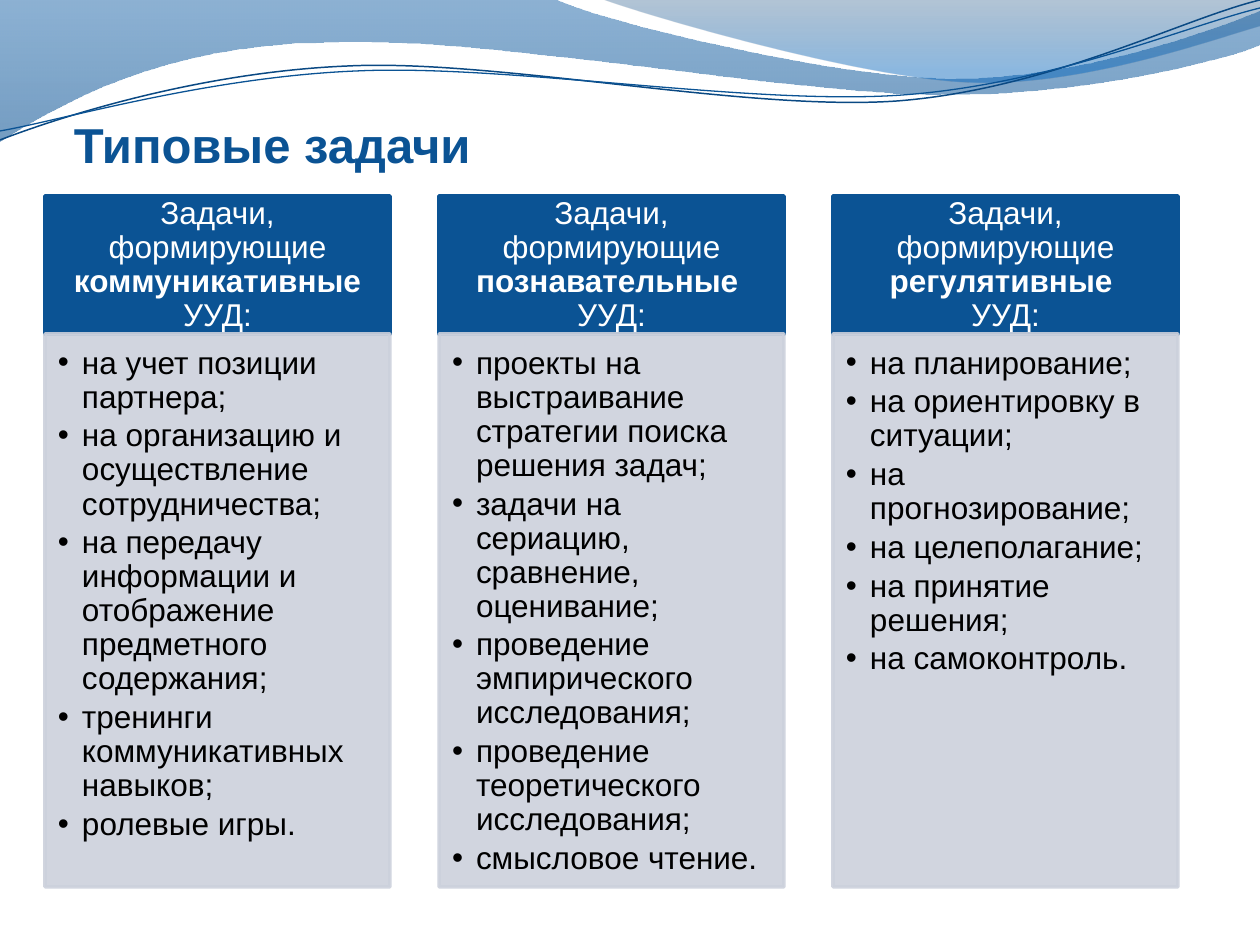
from dataclasses import dataclass

from lxml import etree
from pptx import Presentation
from pptx.dml.color import RGBColor
from pptx.enum.shapes import MSO_SHAPE
from pptx.enum.text import MSO_ANCHOR, PP_ALIGN
from pptx.oxml.ns import qn
from pptx.util import Pt

PX = 914400 // 126
RECT = MSO_SHAPE.RECTANGLE
TOP, MIDDLE, BOTTOM = MSO_ANCHOR.TOP, MSO_ANCHOR.MIDDLE, MSO_ANCHOR.BOTTOM
LEFT, CENTER = PP_ALIGN.LEFT, PP_ALIGN.CENTER


@dataclass(frozen=True)
class Theme:
    font: str = "Arial"
    title_size: int = 28
    text_size: int = 18
    blue: str = "0B5394"
    line_blue: str = "0A4983"
    panel: str = "CCD1DC"
    white: str = "FFFFFF"
    black: str = "000000"


THEME = Theme()

# Waves: start point, then segments of one point (line) or three (Bezier curve);
# gradient stops are position, colour, opacity in percent
WAVES = [
    ((0, 0),
     [[(556, 0)],
      [(600, 21), (837, 79), (955, 79)], [(1075, 79), (1207, 33), (1260, 11)],
      [(1260, 45)],
      [(1239, 55), (1096, 96), (940, 95)], [(784, 95), (481, 35), (324, 43)],
      [(163, 45), (58, 105), (0, 142)]],
     [(0, "00539E", 45), (1, "004C90", 55)]),
    ((604, 0),
     [[(641, 14), (859, 78), (969, 82)], [(1079, 87), (1211, 40), (1260, 26)],
      [(1260, 0)]],
     [(0, "003E76", 30), (0.8, "0063BC", 45)]),
]
WAVE_LINES = [
    ((0, 140),
     [[(60, 117), (199, 72), (349, 66)], [(498, 59), (747, 112), (898, 101)],
      [(1050, 89), (1182, 19), (1260, 0)]],
     THEME.line_blue, 0.85),
    ((0, 131),
     [[(59, 121), (207, 77), (357, 71)], [(508, 64), (752, 106), (903, 95)],
      [(1053, 84), (1186, 26), (1260, 8)]],
     THEME.blue, 0.75),
]

# Columns: emphasised word of the heading, whether a break follows, list of tasks
COLUMNS = [
    ("коммуникативные ", False,
     ["на учет позиции партнера;",
      "на организацию и осуществление сотрудничества;",
      "на передачу информации и отображение предметного содержания;",
      "тренинги коммуникативных навыков;",
      "ролевые игры."]),
    ("познавательные ", True,
     ["проекты на выстраивание стратегии поиска решения задач;",
      "задачи на сериацию, сравнение, оценивание;",
      "проведение эмпирического исследования;",
      "проведение теоретического исследования;",
      "смысловое чтение."]),
    ("регулятивные ", True,
     ["на планирование;",
      "на ориентировку в ситуации;",
      "на прогнозирование;",
      "на целеполагание;",
      "на принятие решения;",
      "на самоконтроль."]),
]


def rgb(value):
    return RGBColor.from_string(value)


def set_attrs(target, **values):
    for name, value in values.items():
        setattr(target, name, value)


def set_opacity(sp, percents):
    """Give the colours of a shape, in order, their opacity."""
    for color, percent in zip(sp._element.spPr.iter(qn("a:srgbClr")), percents):
        etree.SubElement(color, qn("a:alpha"), val=str(percent * 1000))


def add_run(p, text, color, size=THEME.text_size, bold=False):
    r = p.add_run()
    r.text = text
    set_attrs(r.font, name=THEME.font, size=Pt(size), bold=bold)
    r.font.color.rgb = rgb(color)


def setup_frame(sp, anchor, insets):
    tf = sp.text_frame
    left, top, right, bottom = (n * PX for n in insets)
    set_attrs(tf, word_wrap=True, vertical_anchor=anchor, margin_left=left,
              margin_top=top, margin_right=right, margin_bottom=bottom)
    return tf


def add_curve(slide, start, segments, closed):
    """Outline whose three-point segments become Bezier curves."""
    builder = slide.shapes.build_freeform(start[0] * PX, start[1] * PX)
    points = [(x * PX, y * PX) for segment in segments for x, y in segment]
    builder.add_line_segments(points, close=closed)
    sp = builder.convert_to_shape()
    sp.shadow.inherit = False
    lines = iter(list(sp._element.spPr.iter(qn("a:lnTo"))))
    for segment in segments:
        group = [next(lines) for _ in segment]
        if len(group) == 3:
            curve = etree.Element(qn("a:cubicBezTo"))
            group[0].addprevious(curve)
            for line in group:
                curve.append(line[0])
                line.getparent().remove(line)
    return sp


def add_waves(slide):
    for start, segments, stops in WAVES:
        sp = add_curve(slide, start, segments, closed=True)
        sp.line.fill.background()
        sp.fill.gradient()
        sp.fill.gradient_angle = 270
        for stop, (position, color, _) in zip(sp.fill.gradient_stops, stops):
            stop.position = position
            stop.color.rgb = rgb(color)
        set_opacity(sp, [opacity for _, _, opacity in stops])
    for start, segments, color, width in WAVE_LINES:
        sp = add_curve(slide, start, segments, closed=False)
        sp.fill.background()
        sp.line.color.rgb = rgb(color)
        sp.line.width = Pt(width)


def add_title(slide, x, y, w, h):
    box = slide.shapes.add_textbox(x * PX, y * PX, w * PX, h * PX)
    tf = setup_frame(box, BOTTOM, (0, 6, 0, 0))
    add_run(tf.paragraphs[0], "Типовые задачи", THEME.blue, THEME.title_size, True)


def add_panel(slide, x, y, w, h, color):
    sp = slide.shapes.add_shape(RECT, x * PX, y * PX, w * PX, h * PX)
    sp.shadow.inherit = False
    sp.fill.solid()
    sp.fill.fore_color.rgb = sp.line.color.rgb = rgb(color)
    sp.line.width = Pt(2)
    return sp


def add_column(slide, x, y, w, h, word, has_break, tasks):
    head_h, indent = 138, 24 * PX

    # Heading
    head = add_panel(slide, x, y, w, head_h, THEME.blue)
    p = setup_frame(head, MIDDLE, (18, 10, 18, 10)).paragraphs[0]
    set_attrs(p, alignment=CENTER, line_spacing=0.9)
    add_run(p, "Задачи, формирующие ", THEME.white)
    add_run(p, word, THEME.white, bold=True)
    if has_break:
        p.add_line_break()
    add_run(p, "УУД:", THEME.white)

    # Bulleted list
    body = add_panel(slide, x, y + head_h, w, h - head_h, THEME.panel)
    set_opacity(body, (90, 90))
    tf = setup_frame(body, TOP, (13, 13, 18, 20))
    for i, task in enumerate(tasks):
        p = tf.add_paragraph() if i else tf.paragraphs[0]
        set_attrs(p, alignment=LEFT, level=1, line_spacing=0.9, space_after=Pt(2.7))
        pPr = p._p.get_or_add_pPr()
        pPr.set("marL", str(indent))
        pPr.set("indent", str(-indent))
        etree.SubElement(pPr, qn("a:buFont"), typeface=THEME.font)
        etree.SubElement(pPr, qn("a:buChar"), char="•")
        add_run(p, task, THEME.black)


def main():
    prs = Presentation()
    set_attrs(prs, slide_width=1260 * PX, slide_height=945 * PX)
    slide = prs.slides.add_slide(prs.slide_layouts[6])
    add_waves(slide)
    add_title(slide, 74, 15, 1134, 158)
    for i, column in enumerate(COLUMNS):
        add_column(slide, 45 + i * 394, 196, 345, 691, *column)
    prs.save("out.pptx")


if __name__ == "__main__":
    main()
